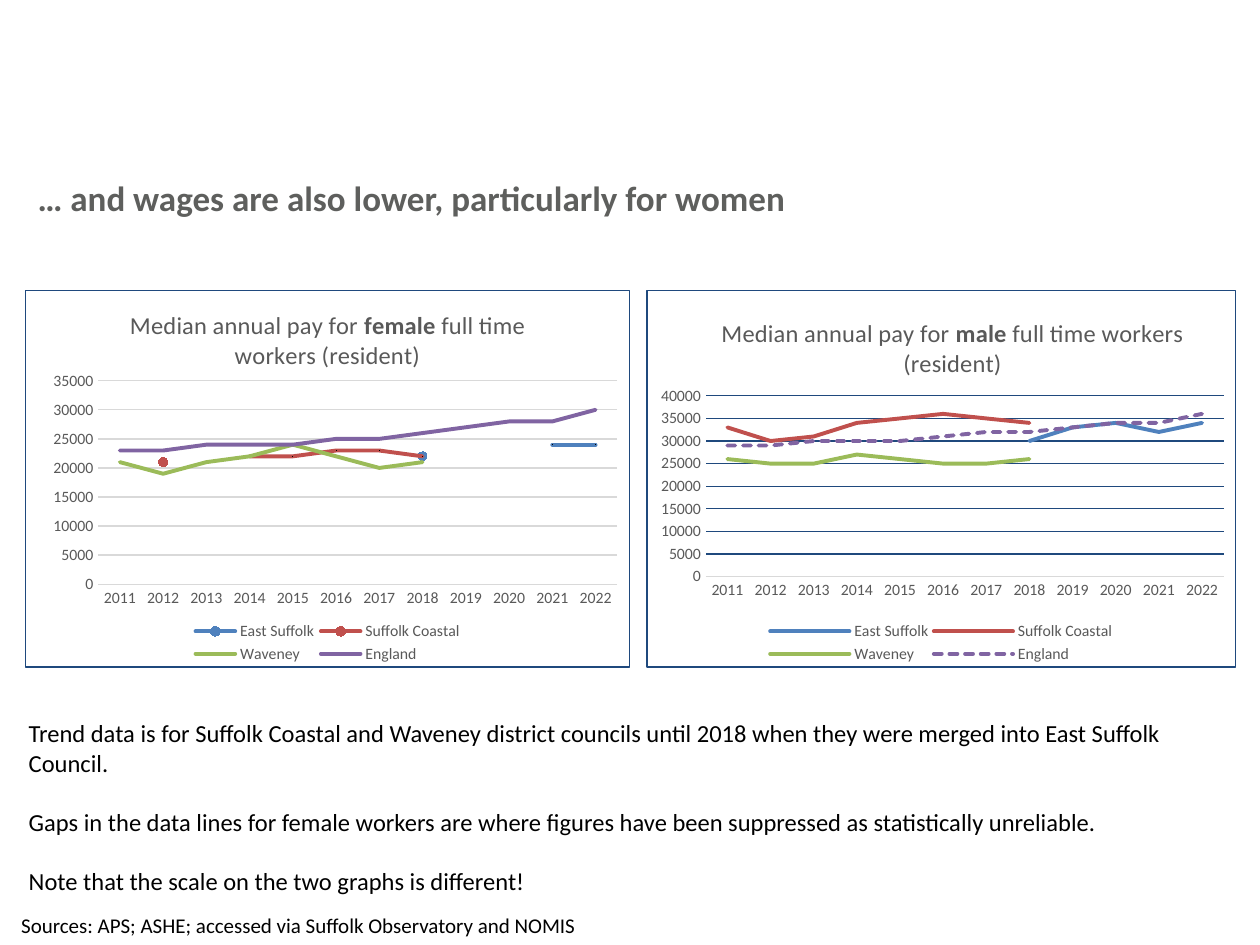
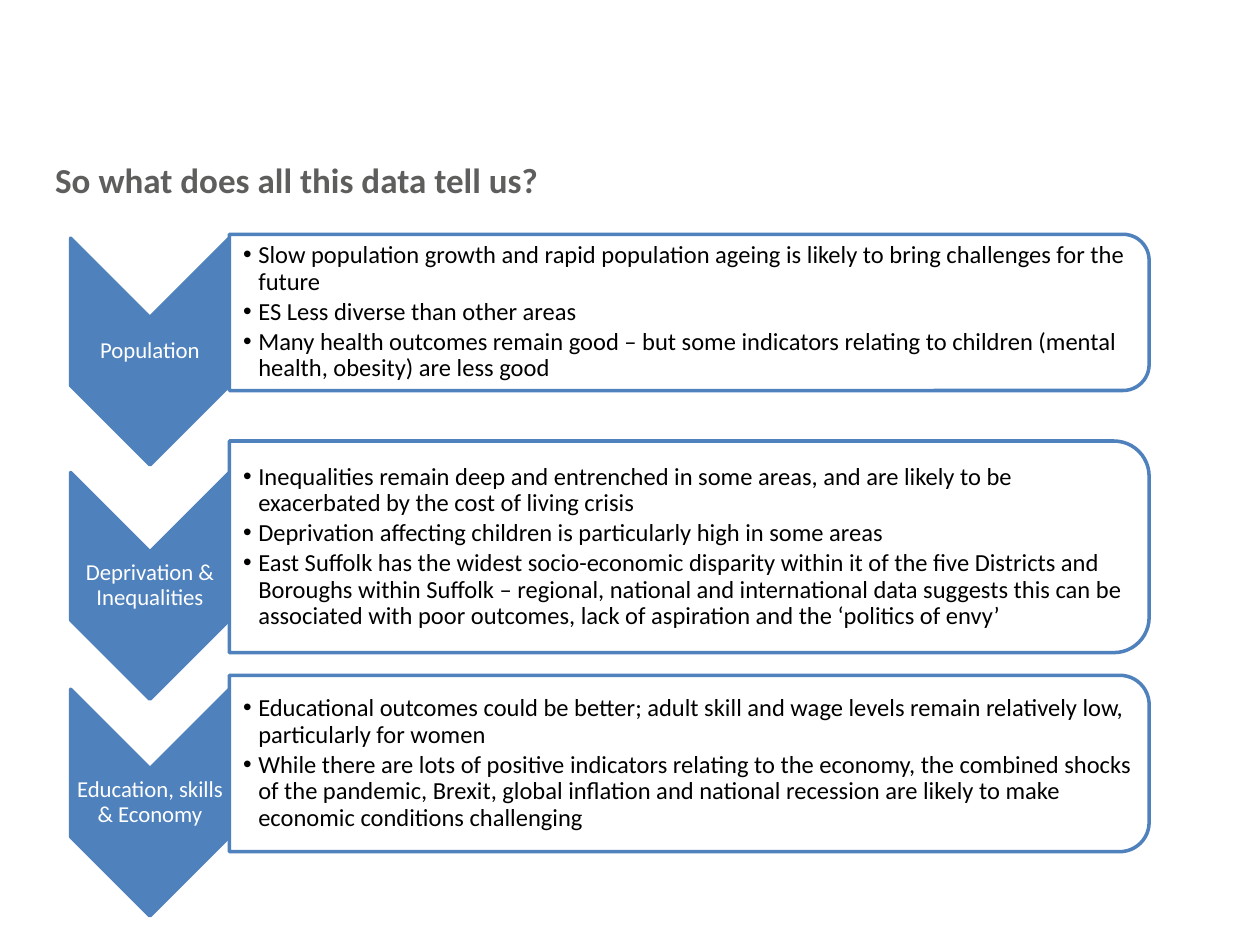
from pptx import Presentation
from pptx.chart.data import CategoryChartData
from pptx.dml.color import RGBColor
from pptx.enum.chart import XL_CHART_TYPE as CT, XL_LEGEND_POSITION as LP
from pptx.enum.chart import XL_MARKER_STYLE as MS, XL_TICK_MARK as TM
from pptx.enum.dml import MSO_LINE
from pptx.enum.shapes import MSO_SHAPE
from pptx.enum.text import MSO_ANCHOR, PP_ALIGN
from pptx.oxml import parse_xml
from pptx.oxml.ns import nsdecls, qn
from pptx.util import Inches, Pt

FONT = "Calibri"
COLORS = {
    "title": "5E5F5D", "text": "000000", "white": "FFFFFF", "blue": "4F81BD",
    "navy": "1F497D", "axis": "595959", "grid": "D9D9D9",
}
AREAS = {
    "East Suffolk": "4F81BD", "Suffolk Coastal": "C0504D",
    "Waveney": "9BBB59", "England": "8064A2",
}
YEARS = [str(year) for year in range(2011, 2023)]
GAP = None
FEMALE_PAY = [
    [GAP] * 7 + [22000, GAP, GAP, 24000, 24000],
    [GAP, 21000, GAP, 22000, 22000, 23000, 23000, 22000] + [GAP] * 4,
    [21000, 19000, 21000, 22000, 24000, 22000, 20000, 21000] + [GAP] * 4,
    [23000, 23000, 24000, 24000, 24000, 25000, 25000, 26000, 27000, 28000, 28000, 30000],
]
MALE_PAY = [
    [GAP] * 7 + [30000, 33000, 34000, 32000, 34000],
    [33000, 30000, 31000, 34000, 35000, 36000, 35000, 34000] + [GAP] * 4,
    [26000, 25000, 25000, 27000, 26000, 25000, 25000, 26000] + [GAP] * 4,
    [29000, 29000, 30000, 30000, 30000, 31000, 32000, 32000, 33000, 34000, 34000, 36000],
]
NOTES = [
    "Trend data is for Suffolk Coastal and Waveney district councils until 2018 when they were merged into East Suffolk Council.",
    "Gaps in the data lines for female workers are where figures have been suppressed as statistically unreliable.",
    "Note that the scale on the two graphs is different!",
]
THEMES = [
    ("Population", 1.89, 1.86, 1.24, [
        "Slow population growth and rapid population ageing is likely to bring challenges for the future",
        "ES Less diverse than other areas",
        "Many health outcomes remain good – but some indicators relating to children (mental health, obesity) are less good",
    ]),
    ("Deprivation & Inequalities", 3.75, 3.5, 1.68, [
        "Inequalities remain deep and entrenched in some areas, and are likely to be exacerbated by the cost of living crisis",
        "Deprivation affecting children is particularly high in some areas",
        "East Suffolk has the widest socio-economic disparity within it of the five Districts and Boroughs within Suffolk – regional, national and international data suggests this can be associated with poor outcomes, lack of aspiration and the ‘politics of envy’",
    ]),
    ("Education, skills & Economy", 5.47, 5.36, 1.4, [
        "Educational outcomes could be better; adult skill and wage levels remain relatively low, particularly for women",
        "While there are lots of positive indicators relating to the economy, the combined shocks of the pandemic, Brexit, global inflation and national recession are likely to make economic conditions challenging",
    ]),
]


def rgb(name):
    return RGBColor.from_string(COLORS.get(name, name))


def style_font(font, size, color, bold=False):
    font.name, font.size, font.bold = FONT, Pt(size), bold
    font.color.rgb = rgb(color)


def style_line(line, color, width):
    line.color.rgb = rgb(color)
    line.width = Pt(width)


def add_bullet(p):
    pPr = p._p.get_or_add_pPr()
    pPr.set("marL", str(Inches(0.12)))
    pPr.set("indent", str(-Inches(0.12)))
    pPr.append(parse_xml(f'<a:buFont {nsdecls("a")} typeface="Arial"/>'))
    pPr.append(parse_xml(f'<a:buChar {nsdecls("a")} char="•"/>'))


def add_text(s, box, lines, size, color="text", bold=False, gap=0, spacing=None,
             align=None, anchor=MSO_ANCHOR.TOP, insets=None, bullets=False):
    tf = s.shapes.add_textbox(*map(Inches, box)).text_frame
    tf.word_wrap = True
    tf.vertical_anchor = anchor
    if insets:
        tf.margin_left, tf.margin_top, tf.margin_right, tf.margin_bottom = map(Inches, insets)
    for i, line in enumerate(lines):
        p = tf.add_paragraph() if i else tf.paragraphs[0]
        p.text = line
        p.alignment = align
        p.line_spacing = spacing
        if i:
            p.space_before = Pt(gap)
        if bullets:
            add_bullet(p)
        for r in p.runs:
            style_font(r.font, size, color, bold)


def add_title(s, left, top, width, text):
    add_text(s, (left, top, width, 0.87), [text], 20, "title", bold=True)


def set_layout(parent, index, box, inner=False):
    old = parent.find(qn("c:layout"))
    if old is not None:
        parent.remove(old)
    target = '<c:layoutTarget val="inner"/>' if inner else ""
    modes = "".join(f'<c:{k}Mode val="edge"/>' for k in "xy")
    values = "".join(f'<c:{k} val="{v}"/>' for k, v in zip("xywh", box))
    parent.insert(index, parse_xml(
        f'<c:layout {nsdecls("c")}><c:manualLayout>{target}{modes}{values}'
        '</c:manualLayout></c:layout>'))


def add_border(chart):
    chart.element.find(qn("c:chart")).addnext(parse_xml(
        f'<c:spPr {nsdecls("c", "a")}><a:noFill/><a:ln w="{Pt(0.75)}"><a:solidFill>'
        f'<a:srgbClr val="{COLORS["navy"]}"/></a:solidFill></a:ln></c:spPr>'))


def round_line_ends(chart):
    for series in chart.element.iter(qn("c:ser")):
        for line in series.iter(qn("a:ln")):
            line.set("cap", "rnd")


def style_axes(chart, maximum, grid):
    for axis in (chart.category_axis, chart.value_axis):
        axis.major_tick_mark = axis.minor_tick_mark = TM.NONE
        style_font(axis.tick_labels.font, 9, "axis")
    style_line(chart.category_axis.format.line, "grid", 0.75)
    values = chart.value_axis
    values.minimum_scale, values.maximum_scale, values.major_unit = 0, maximum, 5000
    values.format.line.fill.background()
    values.has_major_gridlines = True
    style_line(values.major_gridlines.format.line, grid, 0.75)


def mark_isolated_years(series, color, isolated):
    marker = series.marker
    marker.style, marker.size = MS.CIRCLE, 5
    marker.format.fill.solid()
    marker.format.fill.fore_color.rgb = rgb(color)
    style_line(marker.format.line, color, 0.75)
    for i, value in enumerate(series.values):
        if value is not None and YEARS[i] not in isolated:
            point = series.points[i]
            point.marker.style = MS.NONE
            style_line(point.format.line, color, 2.25)


def add_pay_chart(s, left, width, group, pay, maximum, grid, plot, legend,
                  title_at=None, isolated=None, dashed=()):
    isolated = isolated or {}
    data = CategoryChartData()
    data.categories = YEARS
    for area, values in zip(AREAS, pay):
        data.add_series(area, values)
    kind = CT.LINE_MARKERS if isolated else CT.LINE
    chart = s.shapes.add_chart(kind, Inches(left), Inches(2.3), Inches(width),
                               Inches(3), data).chart
    style_font(chart.font, 10, "text")
    chart.has_title = True
    p = chart.chart_title.text_frame.paragraphs[0]
    for text in ("Median annual pay for ", group, " full time workers (resident)"):
        r = p.add_run()
        r.text = text
        style_font(r.font, 14, "axis", bold=text == group)
    chart.chart_title.include_in_layout = False
    chart.has_legend = True
    chart.legend.position = LP.BOTTOM
    chart.legend.include_in_layout = False
    style_font(chart.legend.font, 9, "axis")
    style_axes(chart, maximum, grid)
    chart.plots[0].vary_by_categories = False
    for series in chart.plots[0].series:
        color = AREAS[series.name]
        series.smooth = False
        style_line(series.format.line, color, 2.25)
        if series.name in dashed:
            series.format.line.dash_style = MSO_LINE.SQUARE_DOT
        if series.name in isolated:
            mark_isolated_years(series, color, isolated[series.name])
        else:
            series.marker.style = MS.NONE
    round_line_ends(chart)
    root = chart.element.find(qn("c:chart"))
    set_layout(root.find(qn("c:plotArea")), 0, plot, inner=True)
    set_layout(root.find(qn("c:legend")), 1, legend)
    if title_at:
        set_layout(root.find(qn("c:title")), 1, title_at)
    add_border(chart)


def add_turned_shape(s, kind, left, top, width, height, fill):
    x, y = left + (width - height) / 2, top + (height - width) / 2
    sp = s.shapes.add_shape(kind, Inches(x), Inches(y), Inches(height), Inches(width))
    sp.rotation = 90
    sp.shadow.inherit = False
    sp.fill.solid()
    sp.fill.fore_color.rgb = rgb(fill)
    style_line(sp.line, "blue", 2)


def add_theme(s, label, chevron_top, panel_top, panel_height, points):
    add_turned_shape(s, MSO_SHAPE.CHEVRON, 0.56, chevron_top, 1.26, 1.8, "blue")
    add_text(s, (0.56, chevron_top + 0.63, 1.26, 0.54), [label], 13, "white",
             spacing=0.9, align=PP_ALIGN.CENTER, anchor=MSO_ANCHOR.MIDDLE,
             insets=(0.01,) * 4)
    add_turned_shape(s, MSO_SHAPE.ROUND_2_SAME_RECTANGLE, 1.82, panel_top, 7.3,
                     panel_height, "white")
    add_text(s, (1.82, panel_top, 7.3 - 0.05 * panel_height, panel_height), points, 14,
             gap=2, spacing=0.9, anchor=MSO_ANCHOR.MIDDLE,
             insets=(0.11, 0.01, 0.01, 0.01), bullets=True)


def build_wages(s):
    add_title(s, 0.2, 1.35, 9.57, "… and wages are also lower, particularly for women")
    add_text(s, (0.07, 7.19, 9.86, 0.3),
             ["Sources: APS; ASHE; accessed via Suffolk Observatory and NOMIS"], 12)
    add_pay_chart(s, 0.2, 4.8, "female", FEMALE_PAY, 35000, "grid",
                  (0.12, 0.24, 0.86, 0.54), (0.27, 0.87, 0.46, 0.13),
                  isolated={"East Suffolk": ["2018"], "Suffolk Coastal": ["2012"]})
    add_pay_chart(s, 5.13, 4.68, "male", MALE_PAY, 40000, "navy",
                  (0.1, 0.28, 0.88, 0.48), (0.2, 0.87, 0.6, 0.13),
                  title_at=(0.12, 0.06), dashed=["England"])
    add_text(s, (0.13, 5.65, 9.73, 1.51), NOTES, 14, gap=17)


def build_conclusions(s):
    add_title(s, 0.34, 1.21, 9, "So what does all this data tell us?")
    for theme in THEMES:
        add_theme(s, *theme)


def main():
    prs = Presentation()
    prs.slide_width, prs.slide_height = Inches(10), Inches(7.5)
    for build in (build_wages, build_conclusions):
        build(prs.slides.add_slide(prs.slide_layouts[6]))
    prs.save("out.pptx")


if __name__ == "__main__":
    main()
